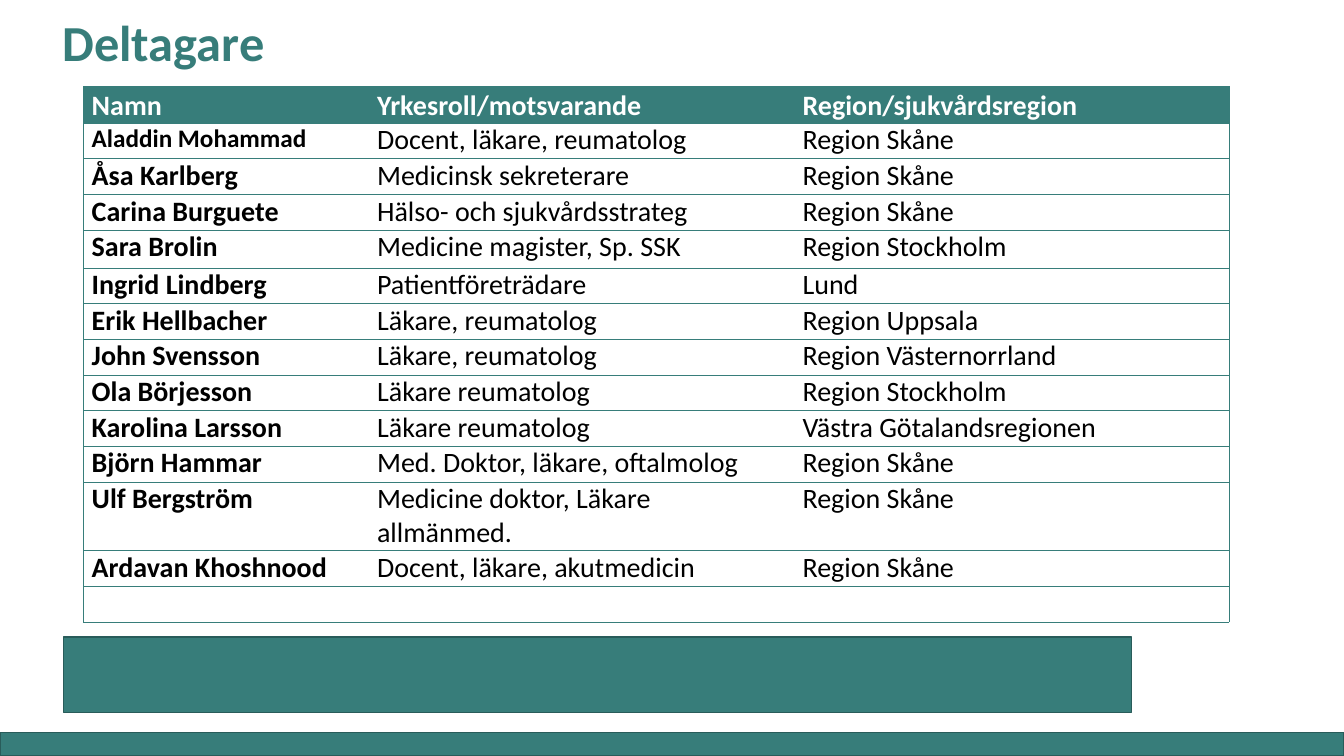
from pptx import Presentation
from pptx.dml.color import RGBColor
from pptx.enum.shapes import MSO_SHAPE
from pptx.enum.text import MSO_ANCHOR, PP_ALIGN
from pptx.oxml import parse_xml
from pptx.oxml.ns import nsdecls
from pptx.util import Inches, Pt

TEAL = RGBColor(0x37, 0x7D, 0x7A)
DARK_TEAL = RGBColor(0x29, 0x5C, 0x5A)
WHITE = RGBColor(0xFF, 0xFF, 0xFF)
BLACK = RGBColor(0x00, 0x00, 0x00)
FONT = "Calibri"

TITLE = "Deltagare"
PARTICIPANTS = [
    ("Namn", "Yrkesroll/motsvarande", "Region/sjukvårdsregion"),
    ("Aladdin Mohammad", "Docent, läkare, reumatolog", "Region Skåne"),
    ("Åsa Karlberg", "Medicinsk sekreterare", "Region Skåne"),
    ("Carina Burguete", "Hälso- och sjukvårdsstrateg", "Region Skåne"),
    ("Sara Brolin", "Medicine magister, Sp. SSK", "Region Stockholm"),
    ("Ingrid Lindberg", "Patientföreträdare", "Lund"),
    ("Erik Hellbacher", "Läkare, reumatolog", "Region Uppsala"),
    ("John Svensson", "Läkare, reumatolog", "Region Västernorrland"),
    ("Ola Börjesson", "Läkare reumatolog", "Region Stockholm"),
    ("Karolina Larsson", "Läkare reumatolog", "Västra Götalandsregionen"),
    ("Björn Hammar", "Med. Doktor, läkare, oftalmolog", "Region Skåne"),
    ("Ulf Bergström", "Medicine doktor, Läkare allmänmed.", "Region Skåne"),
    ("Ardavan Khoshnood", "Docent, läkare, akutmedicin", "Region Skåne"),
    ("", "", ""),
]
COLUMN_WIDTHS = [2.83, 4.22, 4.31]
ROW_HEIGHT = 25.5
SPECIAL_HEIGHTS = {4: 27, 11: 49}
SMALLER_NAME_ROW = 1


def write(frame, text, size, color=BLACK, bold=False, spacing=None):
    para = frame.paragraphs[0]
    para.alignment = PP_ALIGN.LEFT
    para.line_spacing = spacing
    para.font.size = Pt(size)
    if text:
        span = para.add_run()
        span.text = text
        span.font.name = FONT
        span.font.size = Pt(size)
        span.font.bold = bold
        span.font.color.rgb = color


def add_bar(page, left, top, width, height):
    bar = page.shapes.add_shape(
        MSO_SHAPE.RECTANGLE, Inches(left), Inches(top), Inches(width), Inches(height))
    bar.shadow.inherit = False
    bar.fill.solid()
    bar.fill.fore_color.rgb = TEAL
    bar.line.color.rgb = DARK_TEAL
    bar.line.width = Pt(1)


def set_borders(cell, visible_sides):
    """Rule the given sides (letters L, R, T, B) and clear the others."""
    properties = cell._tc.get_or_add_tcPr()
    for position, side in enumerate("LRTB"):
        paint = (f'<a:solidFill><a:srgbClr val="{TEAL}"/></a:solidFill>'
                 if side in visible_sides else "<a:noFill/>")
        border = parse_xml(f'<a:ln{side} {nsdecls("a")} w="{Pt(0.5)}">{paint}</a:ln{side}>')
        properties.insert(position, border)


def add_participant_table(page):
    heights = [SPECIAL_HEIGHTS.get(row, ROW_HEIGHT) for row in range(len(PARTICIPANTS))]
    frame = page.shapes.add_table(
        len(PARTICIPANTS), len(COLUMN_WIDTHS), Inches(0.83), Inches(0.86),
        Inches(sum(COLUMN_WIDTHS)), Pt(sum(heights)))
    table = frame.table
    table.horz_banding = False
    for column, width in zip(table.columns, COLUMN_WIDTHS):
        column.width = Inches(width)
    last_column = len(COLUMN_WIDTHS) - 1
    for row, texts in enumerate(PARTICIPANTS):
        table.rows[row].height = Pt(heights[row])
        header = row == 0
        for column, text in enumerate(texts):
            cell = table.cell(row, column)
            cell.margin_left = cell.margin_right = Inches(0.08)
            cell.margin_top = cell.margin_bottom = 0
            cell.fill.solid()
            cell.fill.fore_color.rgb = TEAL if header else WHITE
            is_name = column == 0
            write(cell.text_frame, text,
                  18 if is_name and row == SMALLER_NAME_ROW else 20,
                  color=WHITE if header else BLACK, bold=header or is_name,
                  spacing=1.06 if header else None)
            set_borders(cell, "TB" + "L" * is_name + "R" * (column == last_column))


def main():
    deck = Presentation()
    deck.slide_width, deck.slide_height = Inches(13.33), Inches(7.5)
    page = deck.slides.add_slide(deck.slide_layouts[5])

    title = page.shapes.title
    title.left, title.top = Inches(0.52), Inches(0.04)
    title.width, title.height = Inches(11.5), Inches(0.82)
    title.text_frame.word_wrap = True
    title.text_frame.vertical_anchor = MSO_ANCHOR.MIDDLE
    write(title.text_frame, TITLE, 36, color=TEAL, bold=True, spacing=0.9)

    add_bar(page, 0, 7.27, 13.33, 0.23)
    add_participant_table(page)
    add_bar(page, 0.63, 6.32, 10.59, 0.75)
    deck.save("out.pptx")


if __name__ == "__main__":
    main()
